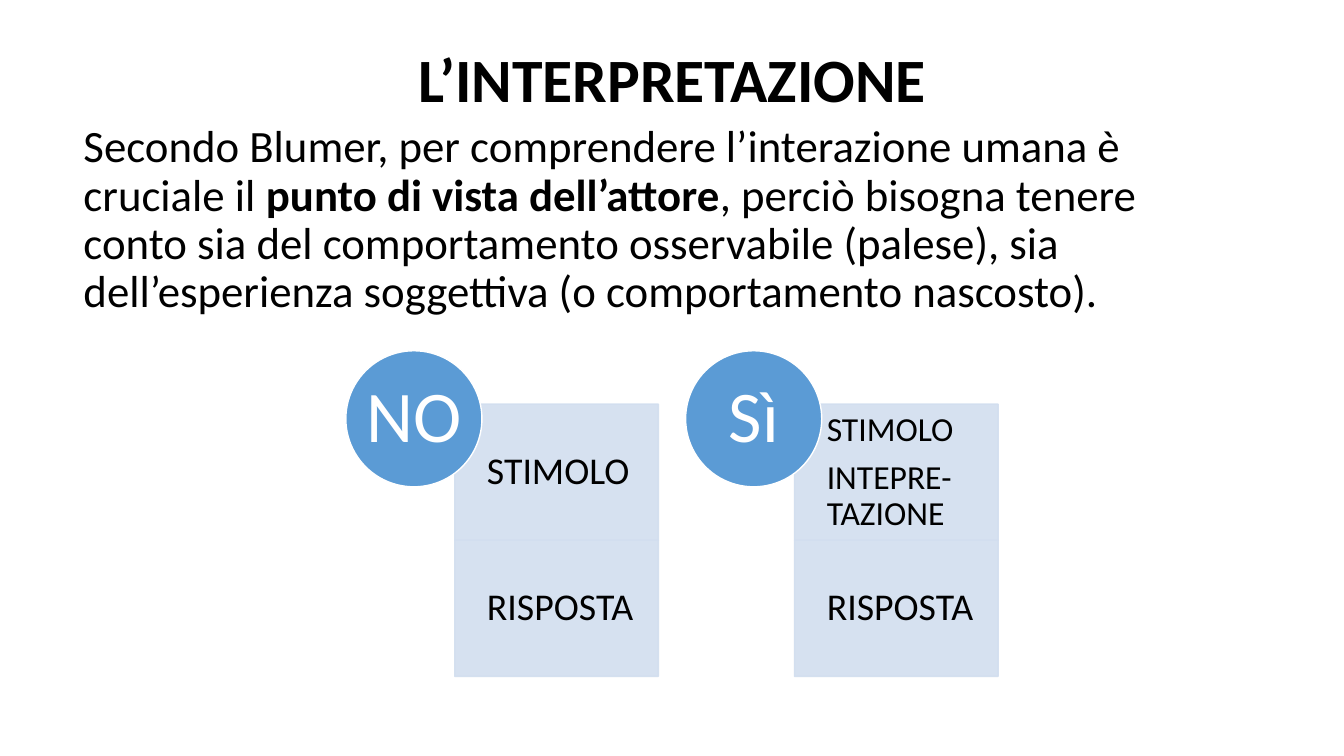
from dataclasses import dataclass

from lxml.etree import SubElement
from pptx import Presentation
from pptx.dml.color import RGBColor
from pptx.enum.shapes import MSO_SHAPE as Shape
from pptx.enum.text import MSO_ANCHOR as Anchor, PP_ALIGN as Align
from pptx.oxml.ns import qn
from pptx.util import Pt

PX = 9144  # one hundredth of an inch


@dataclass(frozen=True)
class Theme:
    font: str = "Calibri"
    black: RGBColor = RGBColor(0, 0, 0)
    white: RGBColor = RGBColor(255, 255, 255)
    circle: RGBColor = RGBColor(0x5B, 0x9B, 0xD5)
    cell: RGBColor = RGBColor(0xD2, 0xDE, 0xEF)
    title_size: int = 44
    body_size: int = 32
    badge_size: int = 52
    cell_size: int = 27
    small_size: int = 24
    line_spacing: float = 0.9


THEME = Theme()


def emu(*lengths):
    return [length * PX for length in lengths]


def style(para, size, color=THEME.black, align=Align.LEFT, bold=None):
    para.alignment = align
    para.line_spacing = THEME.line_spacing
    font = para.font
    font.name, font.size, font.bold = THEME.font, Pt(size), bold
    font.color.rgb = color


def set_insets(frame, left, top, right, bottom):
    (frame.margin_left, frame.margin_top,
     frame.margin_right, frame.margin_bottom) = emu(left, top, right, bottom)


def make_translucent(shape, percent):
    for color in shape._element.spPr.iter(qn("a:srgbClr")):
        SubElement(color, qn("a:alpha"), val=str(percent * 1000))


def add_label(page, kind, box, lines, size, fill, outline, color, align, insets):
    shape = page.shapes.add_shape(kind, *emu(*box))
    shape.shadow.inherit = False
    shape.fill.solid()
    shape.fill.fore_color.rgb = fill
    shape.line.color.rgb = outline
    shape.line.width = Pt(1)
    frame = shape.text_frame
    frame.word_wrap = True
    frame.vertical_anchor = Anchor.MIDDLE
    set_insets(frame, *insets)
    frame.text = "\n".join(lines)
    for para in frame.paragraphs:
        style(para, size, color, align)
        para.space_after = Pt(round(size * 0.35, 1))
    return shape


def add_title(page, box, text):
    title = page.shapes.title
    title.left, title.top, title.width, title.height = emu(*box)
    title.text_frame.text = text
    title.text_frame.vertical_anchor = Anchor.MIDDLE
    style(title.text_frame.paragraphs[0], THEME.title_size, align=Align.CENTER, bold=True)


def add_body(page, box, spans):
    frame = page.shapes.add_textbox(*emu(*box)).text_frame
    frame.word_wrap = True
    para = frame.paragraphs[0]
    style(para, THEME.body_size)
    for text, bold in spans:
        span = para.add_run()
        span.text = text
        if bold:
            span.font.bold = True


def add_model(page, box, badge, cells):
    """Stack the cells at the right of the box, with a round badge at its top left."""
    left, top, width, height = box
    side, indent, drop = 135, 108, 53
    cell_height = (height - drop) // len(cells)
    for index, lines in enumerate(cells):
        size, inset = (THEME.small_size, 19) if len(lines) > 1 else (THEME.cell_size, 21)
        cell_box = (left + indent, top + drop + index * cell_height,
                    width - indent, cell_height)
        cell = add_label(page, Shape.RECTANGLE, cell_box, lines, size, THEME.cell,
                         THEME.cell, THEME.black, Align.LEFT, (32, inset, inset, inset))
        make_translucent(cell, 90)
    add_label(page, Shape.OVAL, (left, top, side, side), [badge], THEME.badge_size,
              THEME.circle, THEME.white, THEME.white, Align.CENTER, (0, 0, 0, 0))


def main():
    deck = Presentation()
    deck.slide_width, deck.slide_height = emu(1333, 750)
    page = deck.slides.add_slide(deck.slide_layouts[5])
    add_title(page, (92, 9, 1150, 145), "L’INTERPRETAZIONE")
    add_body(page, (73, 118, 1150, 600), [
        ("Secondo Blumer, per comprendere l’interazione umana è cruciale il ", False),
        ("punto di vista dell’attore", True),
        (", perciò bisogna tenere conto sia del comportamento osservabile (palese), "
         "sia dell’esperienza soggettiva (o comportamento nascosto).", False),
    ])
    models = [
        ("NO", [["STIMOLO"], ["RISPOSTA"]]),
        ("Sì", [["STIMOLO", "INTEPRE-TAZIONE"], ["RISPOSTA"]]),
    ]
    for index, (badge, cells) in enumerate(models):
        add_model(page, (343 + index * 337, 348, 310, 323), badge, cells)
    deck.save("out.pptx")


if __name__ == "__main__":
    main()
